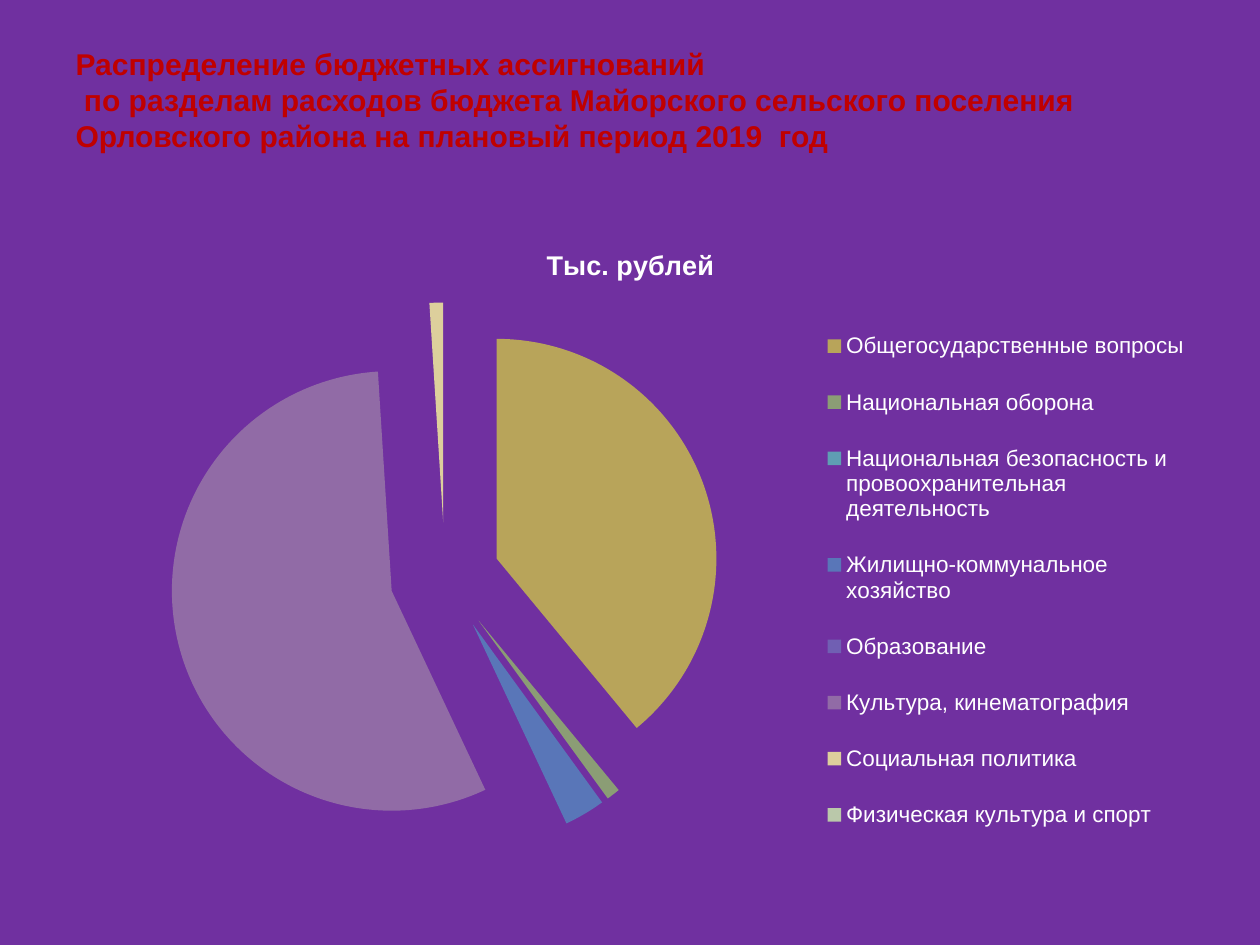
from typing import NamedTuple

from lxml import etree
from pptx import Presentation
from pptx import util as u
from pptx.chart.data import CategoryChartData
from pptx.dml.color import RGBColor
from pptx.enum import chart as ch
from pptx.enum import text
from pptx.oxml import ns

PURPLE = RGBColor(0x70, 0x30, 0xA0)
RED = RGBColor(0xC0, 0x00, 0x00)
WHITE = RGBColor(0xFF, 0xFF, 0xFF)
FONT = "Arial"
UNIT = "Тыс. рублей"
HEAD = (
    "Распределение бюджетных ассигнований\v"
    " по разделам расходов бюджета Майорского сельского поселения "
    "Орловского района на плановый период 2019  год"
)


class Slice(NamedTuple):
    name: str
    share: int
    color: RGBColor


class Box(NamedTuple):
    """Place inside the chart, as fractions of its size."""
    x: float
    y: float
    w: float
    h: float


PIE = Box(0.09, 0.12, 0.49, 0.86)
KEY = Box(0.67, 0.12, 0.33, 0.87)

SLICES = [
    Slice("Общегосударственные вопросы", 39, RGBColor(0xB8, 0xA4, 0x5A)),
    Slice("Национальная оборона", 1, RGBColor(0x8B, 0x9D, 0x75)),
    Slice("Национальная безопасность и провоохранительная деятельность", 0,
          RGBColor(0x5F, 0x9E, 0xB3)),
    Slice("Жилищно-коммунальное хозяйство", 3, RGBColor(0x59, 0x76, 0xB8)),
    Slice("Образование", 0, RGBColor(0x70, 0x5F, 0xB3)),
    Slice("Культура, кинематография", 56, RGBColor(0x91, 0x6B, 0xA6)),
    Slice("Социальная политика", 1, RGBColor(0xDD, 0xCF, 0x9C)),
    Slice("Физическая культура и спорт", 0, RGBColor(0xBA, 0xC8, 0xAA)),
]


def style(font, size: float, color: RGBColor, bold: bool) -> None:
    font.name = FONT
    font.size = u.Pt(size)
    font.bold = bold
    font.color.rgb = color


def place(owner, index: int, box: Box, inner: bool = False) -> None:
    """Give a chart part a fixed layout as its child at index."""
    for old in owner.xpath("c:layout"):
        owner.remove(old)
    layout = etree.Element(ns.qn("c:layout"))
    manual = etree.SubElement(layout, ns.qn("c:manualLayout"))
    marks = [("layoutTarget", "inner")] if inner else []
    marks += [("xMode", "edge"), ("yMode", "edge")]
    marks += list(box._asdict().items())
    for tag, value in marks:
        etree.SubElement(manual, ns.qn(f"c:{tag}"), val=str(value))
    owner.insert(index, layout)


def add_title(slide) -> None:
    title = slide.shapes.title
    title.left, title.top = u.Inches(0.7), u.Inches(0.42)
    title.width, title.height = u.Inches(12.6), u.Inches(1.75)
    frame = title.text_frame
    frame.text = HEAD
    frame.word_wrap = True
    frame.auto_size = text.MSO_AUTO_SIZE.NONE
    frame.vertical_anchor = text.MSO_ANCHOR.BOTTOM
    frame.margin_left = frame.margin_right = u.Inches(0.14)
    frame.margin_top, frame.margin_bottom = u.Inches(0.07), u.Inches(0.46)
    para = frame.paragraphs[0]
    para.alignment = text.PP_ALIGN.LEFT
    para.line_spacing = 1.0
    for run in para.runs:
        style(run.font, 24, RED, True)


def add_pie(slide, slices: list[Slice]) -> None:
    data = CategoryChartData()
    data.categories = [s.name for s in slices]
    data.add_series(UNIT, [s.share for s in slices])
    chart = slide.shapes.add_chart(
        ch.XL_CHART_TYPE.PIE_EXPLODED, u.Inches(0.76), u.Inches(2.51),
        u.Inches(12.49), u.Inches(7.1), data).chart
    style(chart.font, 18, WHITE, False)

    # Heading and legend
    chart.has_title = True
    frame = chart.chart_title.text_frame
    frame.text = UNIT
    style(frame.paragraphs[0].runs[0].font, 21.6, WHITE, True)
    chart.has_legend = True
    chart.legend.position = ch.XL_LEGEND_POSITION.RIGHT
    chart.legend.include_in_layout = False
    place(chart.legend._element, 1, KEY)

    # Slice colours
    plot = chart.plots[0]
    plot.vary_by_categories = True
    for i, part in enumerate(slices):
        look = plot.series[0].points[i].format
        look.fill.solid()
        look.fill.fore_color.rgb = part.color
        look.line.fill.background()
    place(chart._chartSpace.xpath("c:chart/c:plotArea")[0], 0, PIE, True)

    # Pull the slices apart; the schema wants this before the points
    series = plot.series[0]._element
    for old in series.xpath("c:explosion"):
        series.remove(old)
    gap = etree.Element(ns.qn("c:explosion"), val="25")
    series.xpath("c:dPt")[0].addprevious(gap)


def main() -> None:
    deck = Presentation()
    deck.slide_width, deck.slide_height = u.Inches(14), u.Inches(10.5)
    slide = deck.slides.add_slide(deck.slide_layouts[5])
    slide.background.fill.solid()
    slide.background.fill.fore_color.rgb = PURPLE
    add_title(slide)
    add_pie(slide, SLICES)
    deck.save("out.pptx")


if __name__ == "__main__":
    main()
